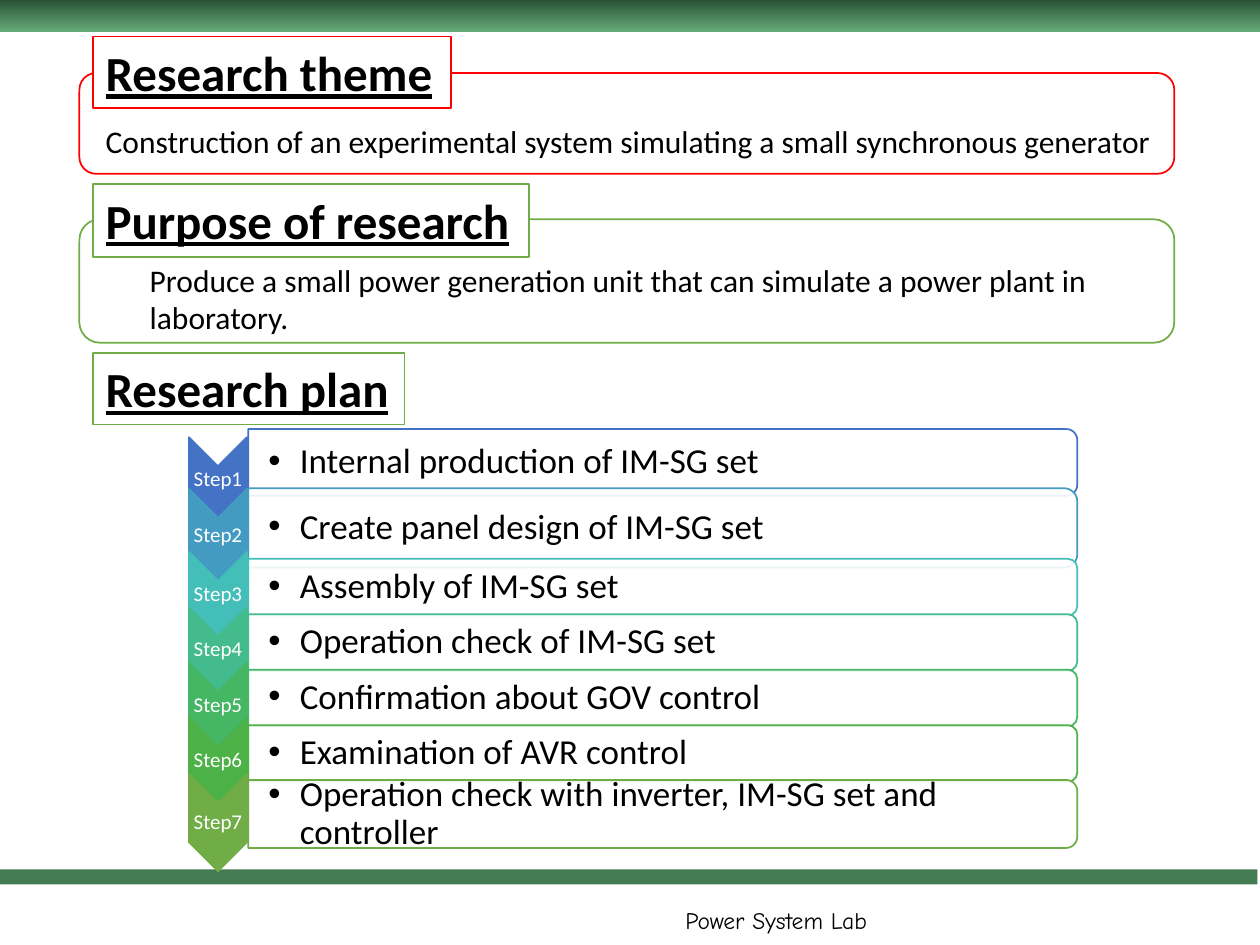
from lxml import etree
from pptx import Presentation
from pptx.dml.color import RGBColor
from pptx.enum.shapes import MSO_SHAPE
from pptx.enum.text import MSO_ANCHOR, PP_ALIGN
from pptx.oxml.ns import qn
from pptx.util import Inches, Pt

RECT, ROUND = MSO_SHAPE.RECTANGLE, MSO_SHAPE.ROUNDED_RECTANGLE
CHEVRON, TAB = MSO_SHAPE.CHEVRON, MSO_SHAPE.ROUND_2_SAME_RECTANGLE
TOP, MIDDLE = MSO_ANCHOR.TOP, MSO_ANCHOR.MIDDLE
LEFT, CENTER = PP_ALIGN.LEFT, PP_ALIGN.CENTER

COLORS = {
    "black": "000000", "white": "FFFFFF", "red": "FF0000", "green": "70AD47",
    "band": "437B52", "dark": "254B2F", "light": "4E9D63",
}
THEME = "Construction of an experimental system simulating a small synchronous generator"
PURPOSE = "Produce a small power generation unit that can simulate a power plant in laboratory."
# Step text, colour, arrow middle, arrow length, bar middle, bar height
STEPS = [
    ("Internal production of IM-SG set", "4472C4", 3.81, 0.68, 3.67, 0.53),
    ("Create panel design of IM-SG set", "449BC1", 4.25, 0.74, 4.19, 0.63),
    ("Assembly of IM-SG set", "43BEB9", 4.72, 0.68, 4.66, 0.45),
    ("Operation check of IM-SG set", "43BB8D", 5.16, 0.68, 5.10, 0.45),
    ("Confirmation about GOV control", "45B664", 5.60, 0.68, 5.54, 0.45),
    ("Examination of AVR control", "4CB146", 6.04, 0.68, 5.98, 0.45),
    ("Operation check with inverter, IM-SG set and controller", "70AD47",
     6.53, 0.77, 6.46, 0.54),
]
ARROW_X, ARROW_W = 1.73, 0.46
BAR_X, BAR_W = 1.97, 6.58


def rgb(name):
    return RGBColor.from_string(COLORS.get(name, name))


def fade(root, share):
    color = root.findall(".//" + qn("a:srgbClr"))[-1]
    etree.SubElement(color, qn("a:alpha")).set("val", str(share * 1000))


def draw(home, kind, box, fill=None, line=None, turn=0):
    shape = home.shapes.add_shape(kind, *map(Inches, box))
    shape.shadow.inherit = False
    shape.rotation = turn
    if fill:
        shape.fill.solid()
        shape.fill.fore_color.rgb = rgb(fill)
    else:
        shape.fill.background()
    if line:
        shape.line.color.rgb = rgb(line)
        shape.line.width = Pt(1)
    else:
        shape.line.fill.background()
    return shape


def write(shape, text, size, color="black", font="Calibri", anchor=TOP,
          align=LEFT, pad=(0.1, 0.05, 0.1, 0.05), wrap=True):
    frame = shape.text_frame
    frame.text = text
    frame.word_wrap = wrap
    frame.vertical_anchor = anchor
    (frame.margin_left, frame.margin_top,
     frame.margin_right, frame.margin_bottom) = map(Inches, pad)
    para = frame.paragraphs[0]
    para.alignment = align
    face = para.runs[0].font
    face.size, face.name, face.color.rgb = Pt(size), font, rgb(color)
    return para


def label(home, box, text, size, **style):
    return write(home.shapes.add_textbox(*map(Inches, box)), text, size, **style)


def title(home, box, text, line, wrap=True):
    para = write(draw(home, RECT, box, "white", line), text, 28, wrap=wrap)
    para.runs[0].font.bold = para.runs[0].font.underline = True


def upright(home, kind, mid_x, mid_y, wide, high, fill, line):
    box = (mid_x - high / 2, mid_y - wide / 2, high, wide)
    return draw(home, kind, box, fill, line, 90)


def step(home, num, text, color, arrow_y, length, bar_y, high):
    upright(home, CHEVRON, ARROW_X, arrow_y, ARROW_W, length, color, color)
    deep = length - ARROW_W
    para = label(home, (ARROW_X - ARROW_W / 2, arrow_y - deep / 2, ARROW_W, deep),
                 f"Step{num}", 12, color="white", anchor=MIDDLE, align=CENTER,
                 pad=(0.01,) * 4)
    para.line_spacing = 0.9

    bar = upright(home, TAB, BAR_X + BAR_W / 2, bar_y, BAR_W, high, "white", color)
    fade(bar.fill._xPr.find(qn("a:solidFill")), 90)
    deep = high - 0.05
    para = label(home, (BAR_X, bar_y - deep / 2, BAR_W - 0.02, deep), text, 20,
                 anchor=MIDDLE, pad=(0.16, 0.01, 0.01, 0.01))
    para.level = 1
    para.line_spacing = 0.9
    props = para._p.get_or_add_pPr()
    props.set("marL", str(Inches(0.25)))
    props.set("indent", str(Inches(-0.25)))
    etree.SubElement(props, qn("a:buFont")).set("typeface", "Arial")
    etree.SubElement(props, qn("a:buChar")).set("char", "•")


def main():
    deck = Presentation()
    deck.slide_width, deck.slide_height = Inches(10), Inches(7.5)
    slide = deck.slides.add_slide(deck.slide_layouts[6])

    label(slide, (5.37, 7.1, 2.14, 0.4), "Power System Lab", 13.5,
          font="Comic Neue", anchor=MIDDLE, pad=(0.07, 0.04, 0.07, 0.04))
    draw(slide, RECT, (-0.02, 6.9, 10, 0.12), "band")
    head = draw(slide, RECT, (0, -0.01, 10, 0.26))
    head.fill.gradient()
    head.fill.gradient_angle = 270
    for stop, name, place in zip(head.fill.gradient_stops, ("dark", "light"), (0, 1)):
        stop.color.rgb = rgb(name)
        stop.position = place
    fade(head.fill._xPr.find(qn("a:gradFill")), 86)

    plan = slide.shapes.add_group_shape()
    for num, row in enumerate(STEPS, 1):
        step(plan, num, *row)

    goal = slide.shapes.add_group_shape()
    draw(goal, ROUND, (0.63, 1.74, 8.69, 0.98), "white", "green")
    title(goal, (0.74, 1.46, 3.46, 0.58), "Purpose of research", "green")
    label(goal, (1.09, 2.02, 7.7, 0.6), PURPOSE, 18)

    title(slide, (0.74, 2.8, 2.47, 0.57), "Research plan", "green", wrap=False)
    label(slide, (0.74, 0.92, 8.69, 0.4), THEME, 18)
    draw(slide, ROUND, (0.63, 0.58, 8.69, 0.8), line="red")
    title(slide, (0.74, 0.29, 2.84, 0.57), "Research theme", "red")

    deck.save("out.pptx")


if __name__ == "__main__":
    main()
